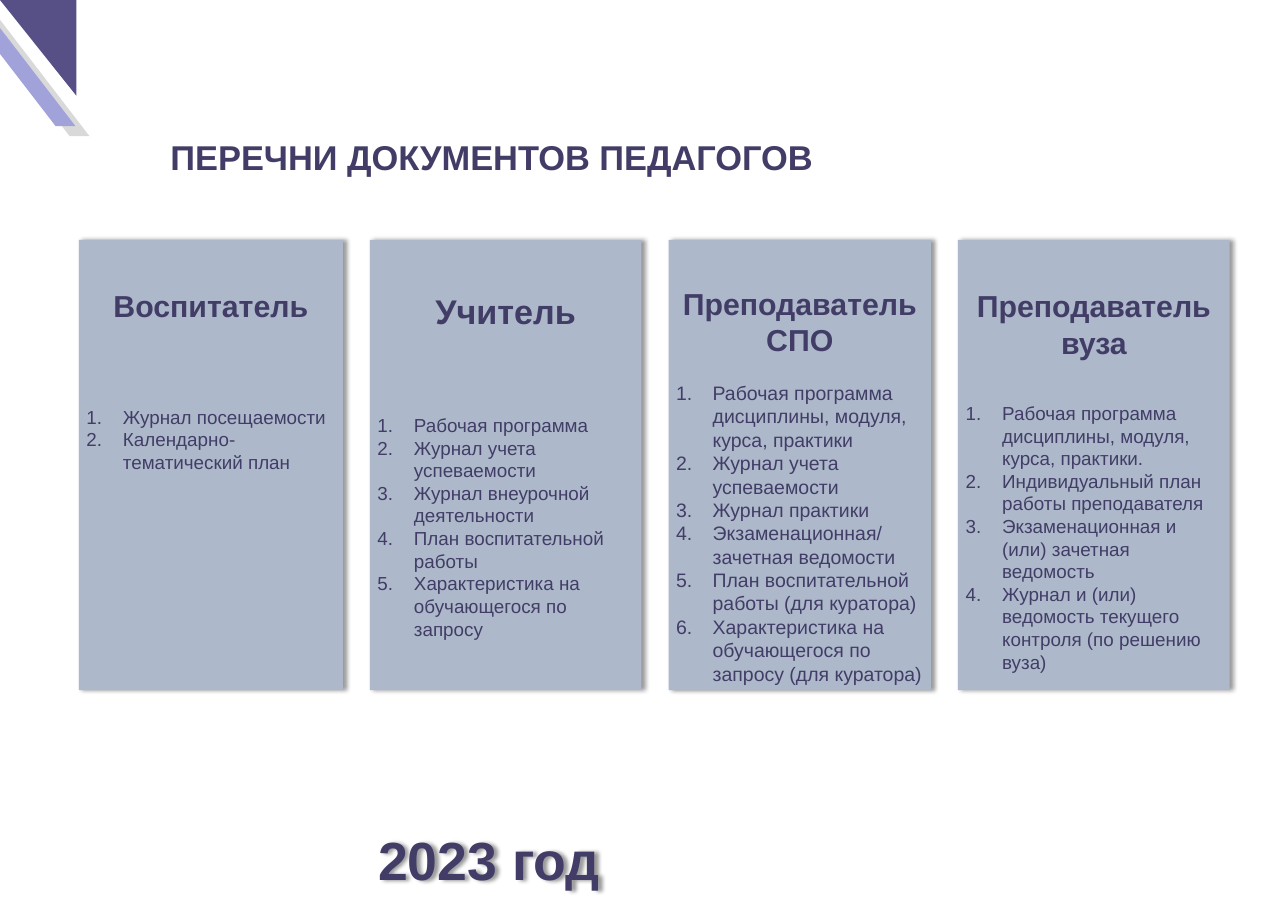
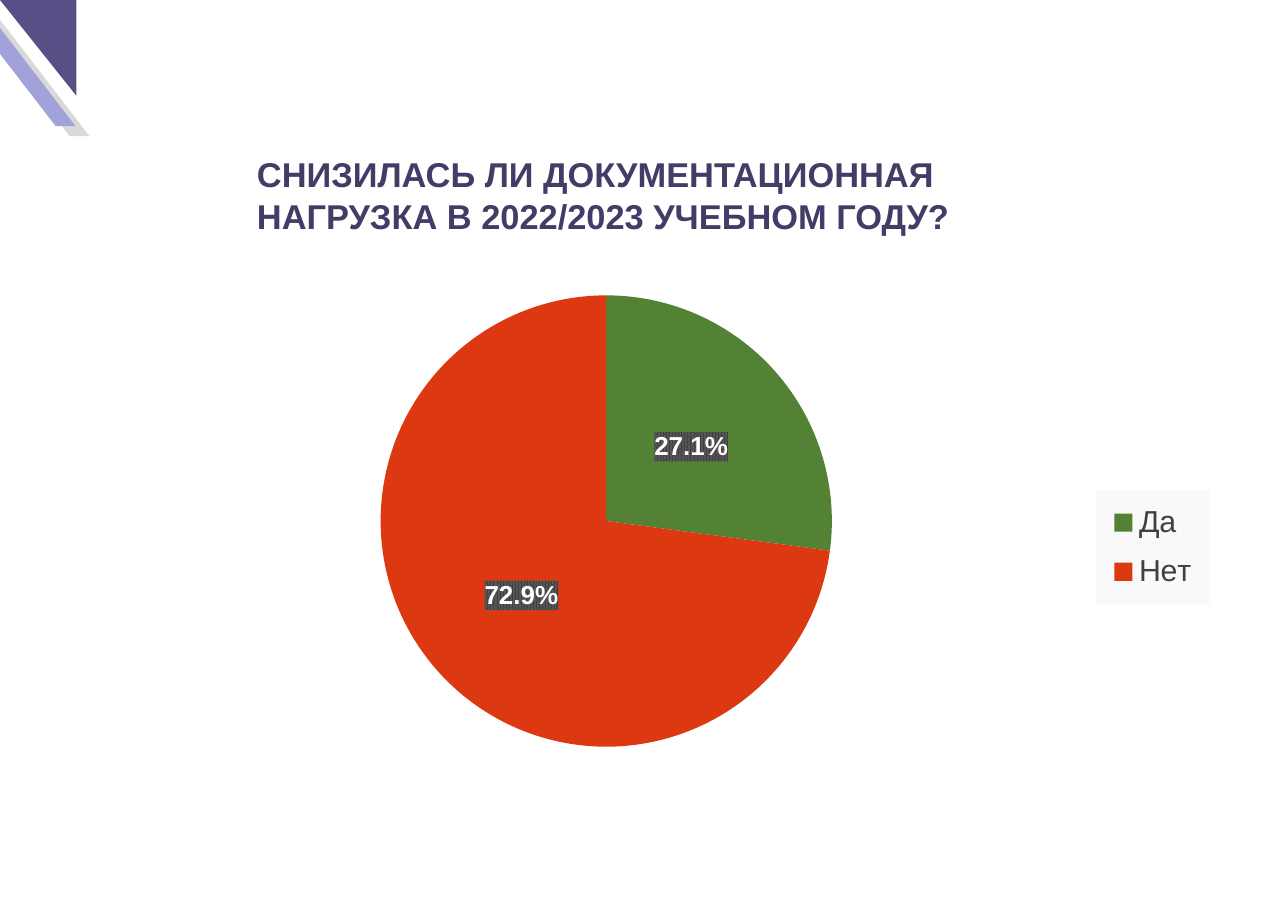
from lxml.etree import SubElement, fromstring
from pptx import Presentation
from pptx.chart.data import CategoryChartData
from pptx.dml.color import RGBColor
from pptx.enum.chart import XL_CHART_TYPE, XL_LABEL_POSITION, XL_LEGEND_POSITION
from pptx.enum.shapes import MSO_SHAPE
from pptx.enum.text import MSO_ANCHOR, PP_ALIGN
from pptx.oxml.ns import nsdecls, qn
from pptx.util import Cm, Pt

FONT = "Arial"
COLORS = {
    "ink": "423D67", "card": "ADB9CA", "gray": "D9D9D9", "lilac": "A2A2DA",
    "violet": "565087", "yes": "548235", "no": "DC3912", "white": "FFFFFF",
    "legend": "404040", "panel": "F9F9F9", "dark": "404040", "mid": "595959",
}
TITLE = {"size": 31.8, "bold": True}
YEAR = {"size": 49.6, "bold": True}

# shape, left, top, width, height, fill, flips
CORNER = [
    (MSO_SHAPE.PARALLELOGRAM, -0.89, 0.33, 3.81, 4.11, "gray", ["flipH"]),
    (MSO_SHAPE.PARALLELOGRAM, -1.35, 0, 3.81, 4.11, "lilac", ["flipH"]),
    (MSO_SHAPE.RIGHT_TRIANGLE, 0, 0, 2.49, 3.12, "violet", ["flipH", "flipV"]),
]
SLANT = 0.83

CARD = {"left": 2.57, "top": 7.82, "high": 14.68, "gap": 0.88}
INDENT = 1.19
CARDS = [
    {"head": "Воспитатель", "wide": 8.61, "inset": 1.53, "space": 76,
     "big": 28, "small": 17.4,
     "items": ["Журнал посещаемости", "Календарно-тематический план"]},
    {"head": "Учитель", "wide": 8.86, "inset": 1.65, "space": 76,
     "big": 31.6, "small": 17.4,
     "items": ["Рабочая программа", "Журнал учета успеваемости",
               "Журнал внеурочной деятельности",
               "План воспитательной работы",
               "Характеристика на обучающегося по запросу"]},
    {"head": "Преподаватель СПО", "wide": 8.56, "inset": 1.47, "space": 21.6,
     "big": 28, "small": 18,
     "items": ["Рабочая программа дисциплины, модуля, курса, практики",
               "Журнал учета успеваемости", "Журнал практики",
               "Экзаменационная/ зачетная ведомости",
               "План воспитательной работы (для куратора)",
               "Характеристика на обучающегося по запросу (для куратора)"]},
    {"head": "Преподаватель вуза", "wide": 8.86, "inset": 1.56, "space": 38,
     "big": 28, "small": 17.4,
     "items": ["Рабочая программа дисциплины, модуля, курса, практики.",
               "Индивидуальный план работы преподавателя",
               "Экзаменационная и (или) зачетная ведомость",
               "Журнал и (или) ведомость текущего контроля (по решению вуза)"]},
]


def rgb(name):
    return RGBColor.from_string(COLORS[name])


def style(font, size, color="ink", bold=False):
    font.color.rgb = rgb(color)
    for key, val in {"name": FONT, "size": Pt(size), "bold": bold}.items():
        setattr(font, key, val)


def write(par, text, **form):
    run = par.add_run()
    run.text = text
    style(run.font, **form)


def add_box(slide, kind, place, fill):
    shape = slide.shapes.add_shape(kind, *map(Cm, place))
    shape.shadow.inherit = False
    shape.fill.solid()
    shape.fill.fore_color.rgb = rgb(fill)
    shape.line.fill.background()
    return shape


def add_text(slide, text, place, form):
    box = slide.shapes.add_textbox(*map(Cm, place))
    box.text_frame.word_wrap = True
    write(box.text_frame.paragraphs[0], text, **form)
    return box


def cast(shape):
    """Give the shape a soft outer shadow."""
    shape.shadow.inherit = False
    effects = shape._element.spPr.find(qn("a:effectLst"))
    effects.append(fromstring(
        f'<a:outerShdw {nsdecls("a")} blurRad="50800" dist="38100" dir="0" '
        'algn="l" rotWithShape="0"><a:srgbClr val="000000">'
        '<a:alpha val="40000"/></a:srgbClr></a:outerShdw>'))


def number(par):
    """Turn the paragraph into a numbered item with a hanging indent."""
    props = par._p.get_or_add_pPr()
    props.set("marL", str(Cm(INDENT)))
    props.set("indent", str(-Cm(INDENT)))
    SubElement(props, qn("a:buFont"), typeface="+mj-lt")
    SubElement(props, qn("a:buAutoNum"), type="arabicPeriod")


def add_card(slide, left, card):
    place = (left, CARD["top"], card["wide"], CARD["high"])
    shape = add_box(slide, MSO_SHAPE.RECTANGLE, place, "card")
    cast(shape)
    frame = shape.text_frame
    form = {"word_wrap": True, "vertical_anchor": MSO_ANCHOR.TOP,
            "margin_top": Cm(card["inset"])}
    for key, val in form.items():
        setattr(frame, key, val)
    head = frame.paragraphs[0]
    head.alignment = PP_ALIGN.CENTER
    write(head, card["head"], size=card["big"], bold=True)
    for pos, text in enumerate(card["items"]):
        par = frame.add_paragraph()
        par.alignment = PP_ALIGN.LEFT
        number(par)
        if pos == 0:
            par.space_before = Pt(card["space"])
        write(par, text, size=card["small"])


def add_slide(deck, title, place):
    """Add a blank slide with the corner motif and a title."""
    slide = deck.slides.add_slide(deck.slide_layouts[6])
    for kind, *spot, fill, flips in CORNER:
        shape = add_box(slide, kind, spot, fill)
        if kind == MSO_SHAPE.PARALLELOGRAM:
            shape.adjustments[0] = SLANT
        for flip in flips:
            shape._element.spPr.find(qn("a:xfrm")).set(flip, "1")
    add_text(slide, title, place, TITLE)
    return slide


def lay_out(parent, index, inner=False, **sizes):
    """Fix the place of a chart part, as shares of the chart."""
    for old in parent.findall(qn("c:layout")):
        parent.remove(old)
    layout = fromstring(f'<c:layout {nsdecls("c")}/>')
    manual = SubElement(layout, qn("c:manualLayout"))
    if inner:
        SubElement(manual, qn("c:layoutTarget"), val="inner")
    for mode in ("xMode", "yMode"):
        SubElement(manual, qn(f"c:{mode}"), val="edge")
    for key, val in sizes.items():
        SubElement(manual, qn(f"c:{key}"), val=str(val))
    parent.insert(index, layout)


def back(fill):
    return fromstring(f'<c:spPr {nsdecls("c", "a")}>{fill}</c:spPr>')


def tint(name):
    return f'<a:srgbClr val="{COLORS[name]}"/>'


def add_labels(series):
    labels = series.data_labels
    form = {"show_percentage": True, "show_value": False,
            "number_format": "0.0%", "number_format_is_linked": False,
            "position": XL_LABEL_POSITION.CENTER}
    for key, val in form.items():
        setattr(labels, key, val)
    style(labels.font, 24, "white", True)
    labels._element.find(qn("c:numFmt")).addnext(back(
        f'<a:pattFill prst="pct75"><a:fgClr>{tint("dark")}</a:fgClr>'
        f'<a:bgClr>{tint("mid")}</a:bgClr></a:pattFill>'))


def add_legend(chart):
    chart.has_legend = True
    legend = chart.legend
    legend.position = XL_LEGEND_POSITION.RIGHT
    legend.include_in_layout = False
    style(legend.font, 28, "legend")
    root = legend._element
    lay_out(root, 1, x=0.89, y=0.43, w=0.1, h=0.24)
    root.find(qn("c:overlay")).addnext(
        back(f'<a:solidFill>{tint("panel")}</a:solidFill>'))


def add_pie(slide, place):
    data = CategoryChartData()
    data.categories = ["Да", "Нет"]
    data.add_series("Series 1", (27.1, 72.9))
    chart = slide.shapes.add_chart(
        XL_CHART_TYPE.PIE, *map(Cm, place), data).chart
    chart.has_title = False
    chart.font.name = FONT
    chart.font.size = Pt(10)
    plot = chart.plots[0]
    plot.vary_by_categories = True
    series = plot.series[0]
    for pos, name in enumerate(("yes", "no")):
        fill = series.points[pos].format.fill
        fill.solid()
        fill.fore_color.rgb = rgb(name)
    add_labels(series)
    add_legend(chart)
    area = chart._chartSpace.find(f'.//{qn("c:plotArea")}')
    lay_out(area, 0, inner=True, x=0.26, y=0.02, w=0.4, h=0.95)


def main():
    deck = Presentation()
    deck.slide_width, deck.slide_height = Cm(42), Cm(29.7)

    lists = add_slide(deck, "ПЕРЕЧНИ ДОКУМЕНТОВ ПЕДАГОГОВ",
                      (5.31, 4.32, 29.85, 1.63))
    left = CARD["left"]
    for card in CARDS:
        add_card(lists, left, card)
        left += card["wide"] + CARD["gap"]
    year = add_text(lists, "2023 год", (11.45, 26.5, 9, 3), YEAR)
    year.text_frame.vertical_anchor = MSO_ANCHOR.MIDDLE
    year.text_frame.paragraphs[0].alignment = PP_ALIGN.CENTER
    cast(year)

    poll = add_slide(
        deck, "СНИЗИЛАСЬ ЛИ ДОКУМЕНТАЦИОННАЯ НАГРУЗКА В 2022/2023 УЧЕБНОМ ГОДУ?",
        (8.13, 4.88, 24.69, 2.97))
    add_pie(poll, (2.69, 9.32, 37.13, 15.49))
    deck.save("out.pptx")


if __name__ == "__main__":
    main()
